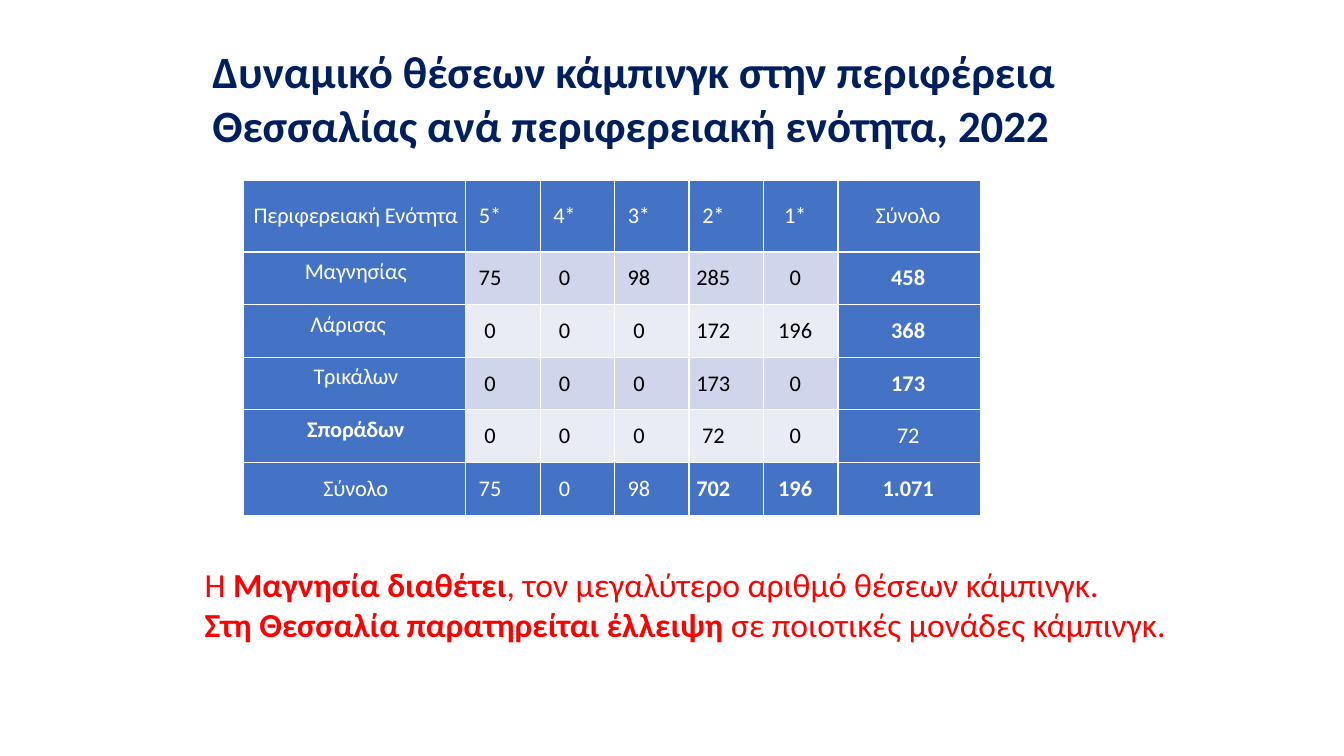
from lxml.etree import SubElement
from pptx import Presentation
from pptx.dml.color import RGBColor
from pptx.enum.text import MSO_ANCHOR as Anchor, MSO_AUTO_SIZE as AutoSize, PP_ALIGN as Align
from pptx.oxml.ns import qn
from pptx.util import Pt

COLORS = {"navy": "001F5F", "red": "FF0000", "blue": "4472C4", "white": "FFFFFF",
          "black": "000000", "band_dark": "CFD5EA", "band_light": "E9EBF5"}

HEADINGS = ["Περιφερειακή Ενότητα", "5*", "4*", "3*", "2*", "1*", "Σύνολο"]
CAMPSITES = [
    ["Μαγνησίας", "75", "0", "98", "285", "0", "458"],
    ["Λάρισας\t", "0", "0", "0", "172", "196", "368"],
    ["Τρικάλων", "0", "0", "0", "173", "0", "173"],
    ["Σποράδων", "0", "0", "0", "72", "0", "72"],
    ["Σύνολο", "75", "0", "98", "702", "196", "1.071"],
]
# (row, column) of the emphasised cells
BOLD_CELLS = {(1, 6), (2, 6), (3, 6), (4, 0), (5, 4), (5, 5), (5, 6)}
COLUMN_WIDTHS = [158.5] + [53.2] * 5 + [102.2]
RIGHT_MARGINS = [0] + [18.5] * 4 + [8, 2]
ROW_HEIGHTS = [51] + [37.6] * 5


def rgb(name):
    return RGBColor.from_string(COLORS[name])


def write(paragraph, text, size=16, color="black", bold=False, font="Calibri", spacing=0):
    """Add formatted text to a paragraph."""
    run = paragraph.add_run()
    run.text = text
    run.font.name = font
    run.font.size = Pt(size)
    run.font.bold = bold
    run.font.color.rgb = rgb(color)
    if spacing:
        run.font._element.set("spc", str(round(spacing * 100)))


class CampingSlide:
    def __init__(self, deck):
        self.slide = deck.slides.add_slide(deck.slide_layouts[5])

    def title(self, text, left, top, width, height, right_margin):
        heading = self.slide.shapes.title
        heading.left, heading.top, heading.width, heading.height = map(Pt, (left, top, width, height))
        frame = heading.text_frame
        frame.auto_size = AutoSize.NONE
        frame.vertical_anchor = Anchor.TOP
        frame.margin_right = Pt(right_margin)
        frame.paragraphs[0].alignment = Align.LEFT
        write(frame.paragraphs[0], text, size=32, color="navy", bold=True)

    def note(self, lines, left, top, width, height):
        frame = self.slide.shapes.add_textbox(*map(Pt, (left, top, width, height))).text_frame
        frame.word_wrap = True
        remark = frame.paragraphs[0]
        for number, line in enumerate(lines):
            if number:
                remark.add_line_break()
            for text, bold in line:
                write(remark, text, size=24, color="red", bold=bold)

    def table(self, rows, left, top):
        size = (sum(COLUMN_WIDTHS), sum(ROW_HEIGHTS))
        grid = self.slide.shapes.add_table(len(rows), len(COLUMN_WIDTHS), *map(Pt, (left, top, *size))).table
        grid.first_row = grid.horz_banding = False
        for column, width in zip(grid.columns, COLUMN_WIDTHS):
            column.width = Pt(width)
        for row, height in zip(grid.rows, ROW_HEIGHTS):
            row.height = Pt(height)
        for r, values in enumerate(rows):
            for c, value in enumerate(values):
                self.cell(grid.cell(r, c), value, r, c)

    def cell(self, cell, value, r, c):
        edge = r in (0, len(CAMPSITES)) or c in (0, len(HEADINGS) - 1)
        cell.margin_left = Pt(1.5 if c == 0 else 0)
        cell.margin_top = cell.margin_bottom = 0
        cell.margin_right = Pt(RIGHT_MARGINS[c])
        cell.vertical_anchor = Anchor.MIDDLE
        self.borders(cell)
        cell.fill.solid()
        cell.fill.fore_color.rgb = rgb("blue" if edge else "band_dark" if r % 2 else "band_light")

        entry = cell.text_frame.paragraphs[0]
        entry.alignment = Align.CENTER
        # Region names sit on a tight line with a tab stop
        if c == 0 and 0 < r < len(CAMPSITES):
            tabs = SubElement(entry._p.get_or_add_pPr(), qn("a:tabLst"))
            SubElement(tabs, qn("a:tab"), pos=str(Pt(65)), algn="l")
            entry.line_spacing = Pt(10.2)
        write(entry, value, color="white" if edge else "black", bold=(r, c) in BOLD_CELLS,
              spacing=-0.15 if r == 0 or c == 0 else 0)

    def borders(self, cell):
        properties = cell._tc.get_or_add_tcPr()
        for side in ("lnL", "lnR", "lnT", "lnB"):
            line = SubElement(properties, qn(f"a:{side}"), w=str(Pt(1)))
            fill = SubElement(line, qn("a:solidFill"))
            SubElement(fill, qn("a:srgbClr"), val=COLORS["white"])


def main():
    deck = Presentation()
    deck.slide_width, deck.slide_height = Pt(960), Pt(540)
    page = CampingSlide(deck)

    # Title
    page.title("Δυναμικό θέσεων κάμπινγκ στην περιφέρεια Θεσσαλίας ανά περιφερειακή ενότητα, 2022",
               144.5, 27.5, 766, 85, right_margin=60)

    # Places by region and star rating
    page.table([HEADINGS] + CAMPSITES, 174.2, 129)

    # Conclusions
    page.note([
        [("Η ", False), ("Μαγνησία διαθέτει", True),
         (", τον μεγαλύτερο αριθμό θέσεων κάμπινγκ.", False)],
        [("Στη Θεσσαλία παρατηρείται έλλειψη ", True), ("σε ποιοτικές μονάδες κάμπινγκ.", False)],
    ], 139, 399, 815, 65.5)

    deck.save("out.pptx")


if __name__ == "__main__":
    main()
